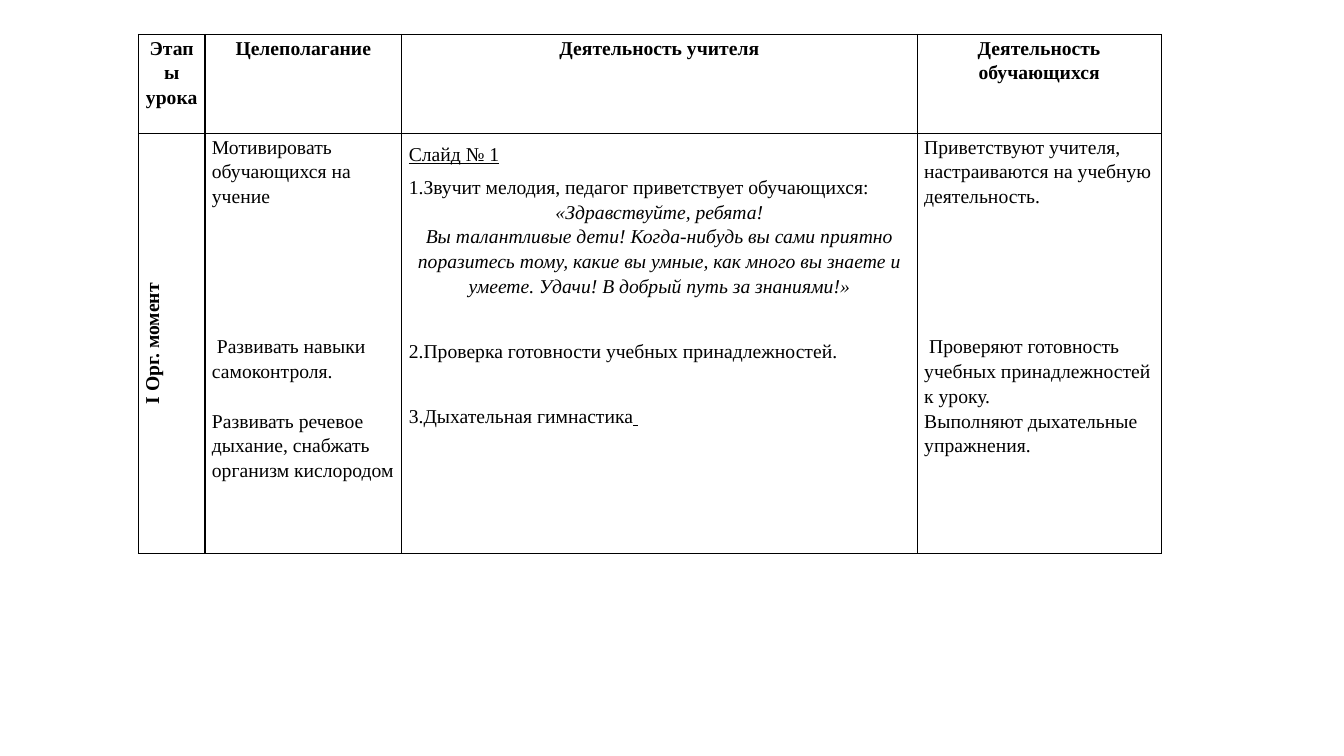
from pptx import Presentation, util as u
from pptx.dml.color import RGBColor
from pptx.enum import text
from pptx.oxml import parse_xml
from pptx.oxml.ns import nsdecls

LEFT, MID, JUST = (text.PP_ALIGN.LEFT, text.PP_ALIGN.CENTER,
                   text.PP_ALIGN.JUSTIFY)
LINE, WIDE = 1.15, 1.5
GAP, TALL = 17.8, 23.2  # one line of text at each spacing, points


def tint(code):
    return RGBColor.from_string(code)


class Page:
    font, size, ink = "Times New Roman", 14, "000000"

    def __init__(self, deck):
        self.wide, self.high = deck.slide_width, deck.slide_height
        self.slide = deck.slides.add_slide(deck.slide_layouts[6])

    def table(self, left, top, cols, rows):
        """Add a plain table; lengths are percentages of the slide."""
        x, w = (round(self.wide * n / 100) for n in (left, sum(cols)))
        y, h = (round(self.high * n / 100) for n in (top, sum(rows)))
        grid = self.slide.shapes.add_table(
            len(rows), len(cols), x, y, w, h).table
        grid.first_row = grid.horz_banding = False
        for col, share in zip(grid.columns, cols):
            col.width = round(self.wide * share / 100)
        for row, share in zip(grid.rows, rows):
            row.height = round(self.high * share / 100)
        for cell in grid.iter_cells():
            self.frame(cell)
        return grid

    def frame(self, cell):
        """Set the borders, margins and empty fill of a cell."""
        cell.margin_left = cell.margin_right = u.Inches(0.07)
        cell.margin_top = cell.margin_bottom = 0
        props = cell._tc.get_or_add_tcPr()
        for side in "LRTB":
            props.append(parse_xml(
                f'<a:ln{side} {nsdecls("a")} w="{u.Pt(1)}"><a:solidFill>'
                f'<a:srgbClr val="{self.ink}"/></a:solidFill></a:ln{side}>'))
        cell.fill.background()

    def label(self, cell, paras, bold=False):
        """Fill a cell with (words, options) paragraphs."""
        for i, (words, opts) in enumerate(paras):
            body = cell.text_frame
            para = body.paragraphs[0] if i == 0 else body.add_paragraph()
            para.text = words
            para.alignment = opts.get("align", LEFT)
            para.line_spacing = opts.get("line", LINE)
            para.space_before = u.Pt(opts.get("gap", 0))
            if "tail" in opts:
                para.add_run().text = opts["tail"]
            for run in para.runs:
                font = run.font
                font.name, font.size, font.bold = (
                    self.font, u.Pt(self.size), bold)
                font.color.rgb = tint(self.ink)
                font.italic = opts.get("slant", False)
                font.underline = opts.get("under", False)
            if "tail" in opts:
                para.runs[-1].font.underline = True


HEADS = ["Этапы урока", "Целеполагание", "Деятельность учителя",
         "Деятельность обучающихся"]
STAGE = "I Орг. момент"
GOALS = [
    ("Мотивировать обучающихся на учение", {}),
    (" Развивать навыки самоконтроля.", {"gap": 5 * GAP}),
    ("Развивать речевое дыхание, снабжать организм кислородом",
     {"gap": GAP}),
]
QUOTE = {"align": MID, "slant": True}
TEACHER = [
    ("Слайд № 1", {"line": WIDE, "under": True}),
    ("1.Звучит мелодия, педагог приветствует обучающихся:", {"line": WIDE}),
    ("«Здравствуйте, ребята!", QUOTE),
    ("Вы талантливые дети! Когда-нибудь вы сами приятно поразитесь тому, "
     "какие вы умные, как много вы знаете и умеете. Удачи! "
     "В добрый путь за знаниями!»", QUOTE),
    ("2.Проверка готовности учебных принадлежностей.",
     {"line": WIDE, "gap": TALL}),
    ("3.Дыхательная гимнастика",
     {"line": WIDE, "gap": TALL, "align": JUST, "tail": " "}),
]
PUPILS = [
    ("Приветствуют учителя, настраиваются на учебную деятельность.", {}),
    (" Проверяют готовность учебных принадлежностей к уроку.",
     {"gap": 5 * GAP}),
    ("Выполняют дыхательные упражнения.", {}),
]


def main():
    deck = Presentation()
    deck.slide_width, deck.slide_height = u.Inches(13.33), u.Inches(7.5)
    page = Page(deck)

    # Lesson plan grid
    plan = page.table(10.3, 4.55, [4.95, 14.65, 38.35, 18.15], [13.1, 55.6])

    # Header row
    for col, head in enumerate(HEADS):
        page.label(plan.cell(0, col), [(head, {"align": MID})], bold=True)

    # Stage name, read upwards
    stage = plan.cell(1, 0)
    page.label(stage, [(STAGE, {"align": MID})], bold=True)
    stage._tc.get_or_add_tcPr().set("vert", "vert270")

    # Goals and activities
    for col, paras in enumerate([GOALS, TEACHER, PUPILS], 1):
        page.label(plan.cell(1, col), paras)

    deck.save("out.pptx")


if __name__ == "__main__":
    main()
